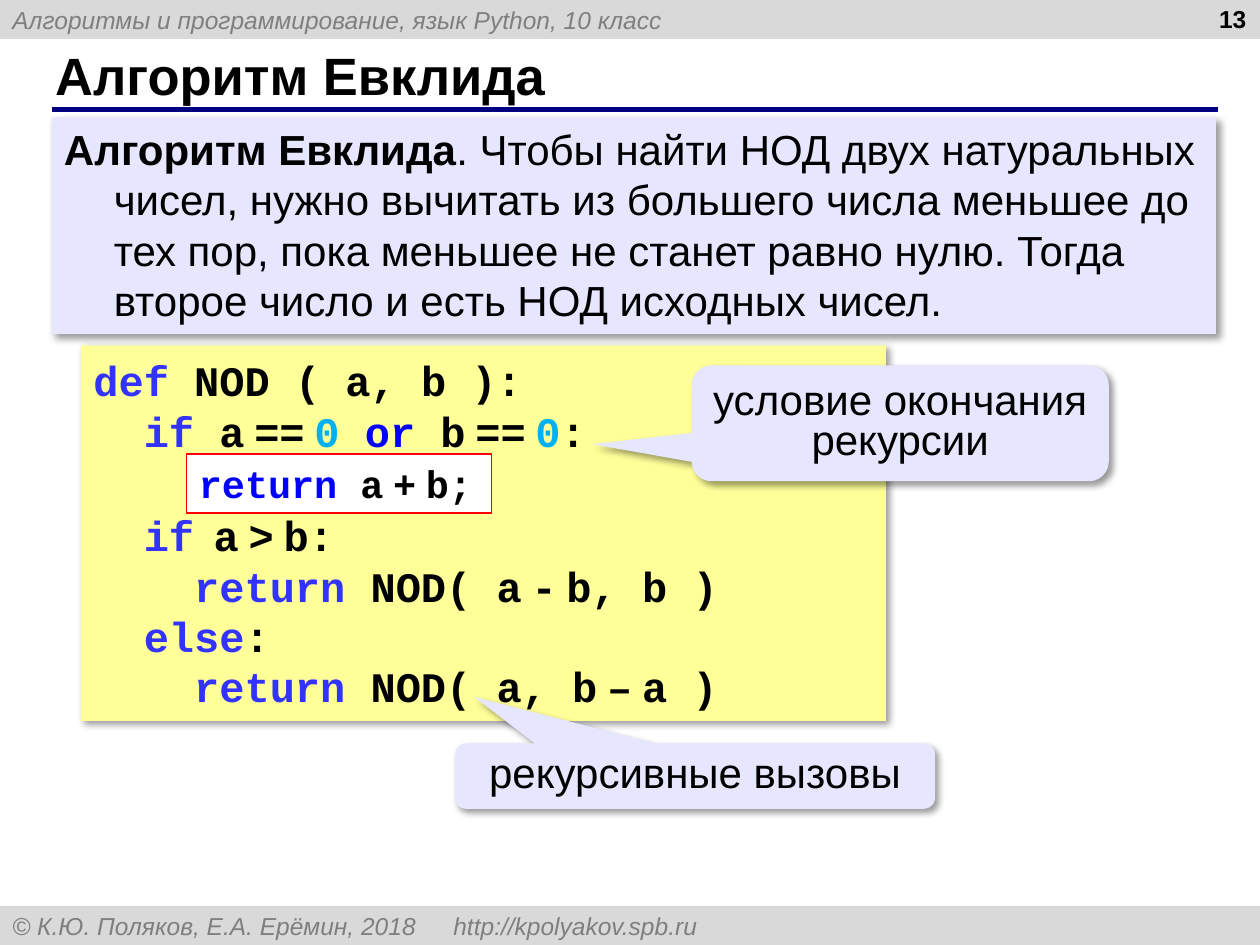
from dataclasses import dataclass
from typing import NamedTuple

from lxml import etree
from pptx import Presentation
from pptx.dml.color import RGBColor
from pptx.enum.shapes import MSO_CONNECTOR as Connector, MSO_SHAPE as Preset
from pptx.enum.text import MSO_ANCHOR as Anchor, MSO_AUTO_SIZE as AutoSize, PP_ALIGN as Align
from pptx.oxml.ns import qn
from pptx.util import Pt

BLACK, WHITE, GREY, BAR = "000000", "FFFFFF", "7F7F7F", "D9D9D9"
LILAC, YELLOW, NAVY, RED = "E6E6FF", "FFFF99", "000080", "FF0000"
KEYWORD, BLUE, NUMBER = "3333FF", "0000FF", "00B0F0"
CODE_INDENT = 28.8  # two characters of 24 pt code


class Run(NamedTuple):
    text: str
    size: float = 24
    color: str = BLACK
    bold: bool = False
    italic: bool = False
    font: str = "Arial"


@dataclass
class Line:
    runs: list[Run]
    align: Align = Align.LEFT
    left: float = 0
    hanging: float = 0
    before: float = 0
    spacing: float = 1.0
    tab: float | None = None


@dataclass
class Box:
    left: float
    top: float
    width: float
    height: float
    lines: list[Line]
    fill: str | None = None
    border: str | None = None
    preset: Preset = Preset.RECTANGLE
    adjustments: tuple[float, ...] = ()
    shadow: bool = False
    anchor: Anchor = Anchor.MIDDLE
    wrap: bool = True
    grow: bool = False


def rgb(color: str) -> RGBColor:
    return RGBColor.from_string(color)


def code(text: str, color: str = BLACK, size: float = 24) -> Run:
    return Run(text, size, color, bold=True, font="Courier New")


def operator(sign: str, size: float = 24) -> list[Run]:
    """An operator between two narrow spaces."""
    gap = Run(" ", 20, bold=True)
    return [gap, code(sign, size=size), gap]


def code_line(level: int, *runs: Run, before: float = 0) -> Line:
    return Line(list(runs), left=14.4 + level * CODE_INDENT, hanging=14.4, before=before)


def callout_text(text: str) -> list[Line]:
    return [Line([Run(text)], Align.CENTER, spacing=0.8)]


def add_shadow(shape) -> None:
    effects = shape._element.spPr.find(qn("a:effectLst"))
    shadow = etree.SubElement(effects, qn("a:outerShdw"), blurRad=str(Pt(4)), dist=str(Pt(3)),
                              dir="2700000", algn="tl", rotWithShape="0")
    color = etree.SubElement(shadow, qn("a:srgbClr"), val=BLACK)
    etree.SubElement(color, qn("a:alpha"), val="40000")


def write_line(paragraph, line: Line) -> None:
    paragraph.alignment = line.align
    paragraph.space_before = Pt(line.before)
    paragraph.line_spacing = line.spacing
    properties = paragraph._p.get_or_add_pPr()
    properties.set("marL", str(Pt(line.left)))
    properties.set("indent", str(Pt(-line.hanging)))
    if line.tab is not None:
        tabs = etree.SubElement(properties, qn("a:tabLst"))
        etree.SubElement(tabs, qn("a:tab"), pos=str(Pt(line.tab)), algn="r")
    for item in line.runs:
        run = paragraph.add_run()
        run.text = item.text
        run.font.name, run.font.size = item.font, Pt(item.size)
        run.font.bold, run.font.italic = item.bold, item.italic
        run.font.color.rgb = rgb(item.color)


def add_box(slide, box: Box) -> None:
    place = [Pt(value) for value in (box.left, box.top, box.width, box.height)]
    if box.fill is None:
        shape = slide.shapes.add_textbox(*place)
    else:
        shape = slide.shapes.add_shape(box.preset, *place)
        shape.shadow.inherit = False
        shape.fill.solid()
        shape.fill.fore_color.rgb = rgb(box.fill)
        if box.border:
            shape.line.color.rgb = rgb(box.border)
            shape.line.width = Pt(0.75)
        else:
            shape.line.fill.background()
    for index, value in enumerate(box.adjustments):
        shape.adjustments[index] = value
    if box.shadow:
        add_shadow(shape)
    frame = shape.text_frame
    frame.word_wrap = box.wrap
    frame.vertical_anchor = box.anchor
    frame.auto_size = AutoSize.SHAPE_TO_FIT_TEXT if box.grow else AutoSize.NONE
    for index, line in enumerate(box.lines):
        write_line(frame.add_paragraph() if index else frame.paragraphs[0], line)


def add_rule(slide, left: float, right: float, top: float) -> None:
    rule = slide.shapes.add_connector(Connector.STRAIGHT, Pt(left), Pt(top), Pt(right), Pt(top))
    rule.line.color.rgb = rgb(NAVY)
    rule.line.width = Pt(3)
    etree.SubElement(rule._element.spPr, qn("a:effectLst"))


def bar(top: float, text: str, tab: float | None = None) -> Box:
    return Box(0, top, 720, 22.3, [Line([Run(text, 14, GREY, italic=True)], tab=tab)], BAR)


PROGRAM = [
    code_line(0, code("def", KEYWORD), code(" NOD ( a, b ):")),
    code_line(1, code("if", KEYWORD), code(" a"), *operator("=="), code("0 ", NUMBER),
              code("or", BLUE), code(" b"), *operator("=="), code("0", NUMBER), code(":")),
    # The gap before this line leaves room for the framed return
    code_line(1, code("if", KEYWORD), Run("  ", 20, bold=True), code("a"), *operator(">"),
              code("b:"), before=30.9),
    code_line(2, code("return", KEYWORD), code(" NOD( a"), *operator("-"), code("b, b )")),
    code_line(1, code("else", KEYWORD), code(":")),
    code_line(2, code("return", KEYWORD), code(" NOD( a, b"), *operator("–"), code("a )")),
]

DEFINITION = [Line([
    Run("Алгоритм Евклида", bold=True),
    Run(". Чтобы найти НОД двух натуральных чисел, нужно вычитать из большего числа меньшее "
        "до тех пор, пока меньшее не станет равно нулю. Тогда второе число и есть НОД "
        "исходных чисел."),
], left=28.5, hanging=28.5)]

FRAMED_RETURN = [Line([code("return ", BLUE, 22), code("a", size=22),
                       *operator("+", 22), code("b;", size=22)])]


def main() -> None:
    presentation = Presentation()
    presentation.slide_width, presentation.slide_height = Pt(720), Pt(540)
    slide = presentation.slides.add_slide(presentation.slide_layouts[6])

    # Header, footer and title
    add_box(slide, bar(0, "Алгоритмы и программирование, язык Python, 10 класс"))
    add_box(slide, bar(517.7, "© К.Ю. Поляков, Е.А. Ерёмин, 2018 \thttp://kpolyakov.spb.ru", 692))
    add_rule(slide, 29.5, 696, 62.6)
    add_box(slide, Box(24.5, 23.8, 659.5, 37.4, [Line([Run("Алгоритм Евклида", 30, bold=True)])]))
    add_box(slide, Box(551.5, -1.4, 167.8, 37.4, [Line([Run("13", 14, bold=True)], Align.RIGHT)],
                       anchor=Anchor.TOP))

    # Definition and program
    add_box(slide, Box(29.5, 67, 665.3, 123.8, DEFINITION, LILAC, shadow=True,
                       anchor=Anchor.TOP, grow=True))
    add_box(slide, Box(46.3, 197.3, 460, 214.6, PROGRAM, YELLOW, shadow=True, grow=True))
    add_box(slide, Box(106.6, 259.4, 174.2, 33.8, FRAMED_RETURN, WHITE, RED,
                       anchor=Anchor.TOP, wrap=False, grow=True))

    # Callouts
    add_box(slide, Box(260, 424.8, 274.3, 37.4, callout_text("рекурсивные вызовы"), LILAC,
                       preset=Preset.ROUNDED_RECTANGULAR_CALLOUT,
                       adjustments=(-0.46, -1.21, 0.17), shadow=True))
    add_box(slide, Box(395.3, 208.8, 238.3, 66.2, callout_text("условие окончания рекурсии"), LILAC,
                       preset=Preset.ROUNDED_RECTANGULAR_CALLOUT,
                       adjustments=(-0.74, 0.18, 0.17), shadow=True))

    presentation.save("out.pptx")


if __name__ == "__main__":
    main()
